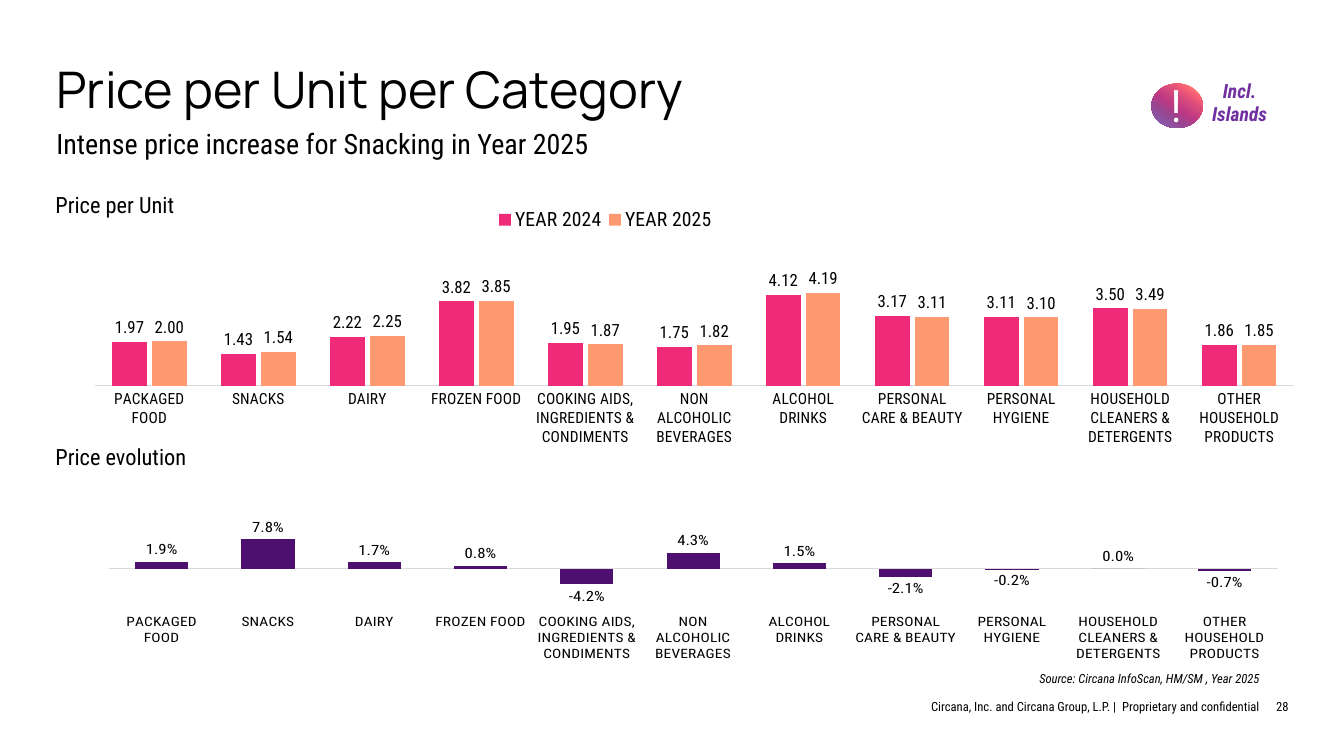
from lxml import etree
from pptx import Presentation
from pptx import util as u
from pptx.chart.data import CategoryChartData
from pptx.dml.color import RGBColor
from pptx.enum import chart as kinds, shapes, text
from pptx.oxml import ns

BODY_FONT, TITLE_FONT = "Roboto Condensed", "Manrope"
BLACK, WHITE, AXIS_GREY, VIOLET = "000000", "FFFFFF", "D9D9D9", "7030A0"
CATEGORIES = [
    "PACKAGED FOOD", "SNACKS", "DAIRY", "FROZEN FOOD",
    "COOKING AIDS, INGREDIENTS & CONDIMENTS", "NON ALCOHOLIC BEVERAGES",
    "ALCOHOL DRINKS", "PERSONAL CARE & BEAUTY", "PERSONAL HYGIENE",
    "HOUSEHOLD CLEANERS & DETERGENTS", "OTHER HOUSEHOLD PRODUCTS",
]
# Each series: name, colour, values
PRICES = [
    ("YEAR 2024", "EF2A79",
     [1.97, 1.43, 2.22, 3.82, 1.95, 1.75, 4.12, 3.17, 3.11, 3.50, 1.86]),
    ("YEAR 2025", "FF9971",
     [2.00, 1.54, 2.25, 3.85, 1.87, 1.82, 4.19, 3.11, 3.10, 3.49, 1.85]),
]
EVOLUTION = [
    ("Price evolution", "4E106F",
     [0.019, 0.078, 0.017, 0.008, -0.042, 0.043, 0.015, -0.021, -0.002, 0, -0.007]),
]
BADGE_STOPS = [(5, "FF9971"), (21, "F75F75"), (35, "D94B7D"), (53, "BD3884"),
               (70, "964894"), (84, "8B57A8"), (95, "7A4C93")]


def rgb(value):
    return RGBColor.from_string(value)


def style_font(font, size, color=BLACK, name=BODY_FONT):
    font.name, font.size = name, u.Pt(size)
    font.color.rgb = rgb(color)


def inches(box):
    return [u.Inches(length) for length in box]


def write(shape, words, size, color=BLACK, name=BODY_FONT, align="LEFT",
          anchor="TOP", inset=0, spacing=None, bold=False, italic=False):
    frame = shape.text_frame
    frame.word_wrap, frame.auto_size = True, text.MSO_AUTO_SIZE.NONE
    frame.vertical_anchor = getattr(text.MSO_ANCHOR, anchor)
    frame.margin_left = frame.margin_right = u.Inches(inset)
    frame.margin_top = frame.margin_bottom = u.Inches(inset / 2)
    para = frame.paragraphs[0]
    para.alignment = getattr(text.PP_ALIGN, align)
    para.line_spacing = spacing
    span = para.add_run()
    span.text = words
    style_font(span.font, size, color, name)
    span.font.bold, span.font.italic = bold, italic


def add_text(parent, box, words, size, **options):
    write(parent.add_textbox(*inches(box)), words, size, **options)


def set_layout(parent, index, box, inner=False):
    """Place a plot area or legend by fractions of its chart."""
    for old in parent.findall(ns.qn("c:layout")):
        parent.remove(old)
    layout = etree.Element(ns.qn("c:layout"))
    manual = etree.SubElement(layout, ns.qn("c:manualLayout"))
    settings = [("layoutTarget", "inner")] if inner else []
    settings += [("xMode", "edge"), ("yMode", "edge"), *zip("xywh", box)]
    for tag, value in settings:
        etree.SubElement(manual, ns.qn(f"c:{tag}")).set("val", str(value))
    parent.insert(index, layout)


def add_columns(page, box, series_rows, number_format, limits, plot_box, overlap=0):
    data = CategoryChartData(number_format=number_format)
    data.categories = CATEGORIES
    for name, _, values in series_rows:
        data.add_series(name, values)
    chart = page.shapes.add_chart(
        kinds.XL_CHART_TYPE.COLUMN_CLUSTERED, *inches(box), data).chart
    chart.has_title = chart.has_legend = False
    style_font(chart.font, 12)

    # Axes
    amounts, names = chart.value_axis, chart.category_axis
    amounts.minimum_scale, amounts.maximum_scale = limits
    amounts.has_major_gridlines = amounts.visible = False
    names.major_tick_mark = kinds.XL_TICK_MARK.NONE
    names.format.line.color.rgb = rgb(AXIS_GREY)
    names.format.line.width = u.Pt(0.75)
    if limits[0] < 0:
        names.tick_label_position = kinds.XL_TICK_LABEL_POSITION.LOW
    style_font(names.tick_labels.font, 11)
    for body in chart.element.xpath(".//c:catAx/c:txPr/a:bodyPr"):
        body.set("rot", "-60000000")

    # Columns and their values
    plot = chart.plots[0]
    plot.gap_width, plot.overlap, plot.vary_by_categories = 100, overlap, False
    for series, (_, color, _) in zip(plot.series, series_rows):
        series.invert_if_negative = False
        series.format.fill.solid()
        series.format.fill.fore_color.rgb = rgb(color)
        labels = series.data_labels
        labels.show_value = True
        labels.number_format, labels.number_format_is_linked = number_format, False
        labels.position = kinds.XL_LABEL_POSITION.OUTSIDE_END
        style_font(labels.font, 12)
    set_layout(chart.element.find(".//" + ns.qn("c:plotArea")), 0, plot_box, inner=True)
    return chart


def add_heading(page, box):
    left, top, width, height = box
    title = page.shapes.title
    title.left, title.top, title.width, title.height = inches((left, top, width, 0.6))
    write(title, "Price per Unit per Category", 36, name=TITLE_FONT, spacing=0.9)
    add_text(page.shapes, (left, top + 0.65, width, height - 0.65),
             "Intense price increase for Snacking in Year 2025", 20, spacing=0.9)


def add_price_section(page, box):
    left, top, width, height = box
    chart = add_columns(page, box, PRICES, "0.00", (0, 10),
                        (0.036, 0.032, 0.949, 0.693), overlap=-15)
    chart.has_legend = True
    legend = chart.legend
    legend.position = kinds.XL_LEGEND_POSITION.TOP
    legend.include_in_layout = False
    style_font(legend.font, 14)
    set_layout(chart.element.find(".//" + ns.qn("c:legend")), 1, (0.35, 0.15, 0.18, 0.11))
    add_text(page.shapes, (left + 0.06, top + 0.37, 3, 0.36), "Price per Unit", 16)


def add_evolution_section(page, box):
    left, top, width, height = box
    add_text(page.shapes, (left, top, 3, 0.36), "Price evolution", 16)
    add_columns(page, (left + 0.16, top + 0.4, width - 0.16, height - 0.4),
                EVOLUTION, "0.0%", (-0.1, 0.2), (0.03, 0.065, 0.949, 0.754))


def add_islands_badge(page, box):
    left, top, width, height = box
    badge = page.shapes.add_group_shape().shapes
    disc = badge.add_shape(shapes.MSO_SHAPE.OVAL, *inches((left, top + 0.11, 0.51, 0.44)))
    disc.shadow.inherit = False
    disc.line.fill.background()
    disc.fill.gradient()
    gradient = disc.fill._xPr.find(ns.qn("a:gradFill"))
    stops = gradient.find(ns.qn("a:gsLst"))
    for stop in list(stops):
        stops.remove(stop)
    for percent, color in BADGE_STOPS:
        stop = etree.SubElement(stops, ns.qn("a:gs"), pos=str(percent * 1000))
        etree.SubElement(stop, ns.qn("a:srgbClr"), val=color)
    gradient.find(ns.qn("a:lin")).set("ang", str(124 * 60000))
    add_text(badge, (left + 0.05, top, 0.39, 0.46), "!", 32,
             color=WHITE, align="CENTER", inset=0.1)
    add_text(badge, (left + 0.44, top + 0.01, width - 0.44, height - 0.01),
             "Incl. Islands", 14, color=VIOLET, align="CENTER", inset=0.1,
             bold=True, italic=True)


def add_footer(page, box):
    left, top, width, height = box
    edge = left + width
    small = dict(size=9, align="RIGHT", anchor="BOTTOM")
    add_text(page.shapes, (edge - 5.64, top, 5.35, 0.18),
             "Source: Circana InfoScan, HM/SM , Year 2025", italic=True, spacing=0.9, **small)
    add_text(page.shapes, (edge - 4.49, top + 0.26, 4.2, 0.2),
             "Circana, Inc. and Circana Group, L.P. |  Proprietary and confidential",
             spacing=0.9, **small)
    add_text(page.shapes, (edge - 0.2, top + 0.27, 0.2, 0.18), "28", **small)


def main():
    deck = Presentation()
    deck.slide_width, deck.slide_height = u.Inches(13.33), u.Inches(7.5)
    page = deck.slides.add_slide(deck.slide_layouts[5])
    add_heading(page, (0.56, 0.64, 12.23, 1.15))
    add_price_section(page, (0.49, 1.53, 12.53, 3.17))
    add_evolution_section(page, (0.55, 4.4, 12.38, 2.17))
    add_islands_badge(page, (11.42, 0.72, 1.31, 0.58))
    add_footer(page, (7.14, 6.63, 5.64, 0.46))
    deck.save("out.pptx")


if __name__ == "__main__":
    main()
